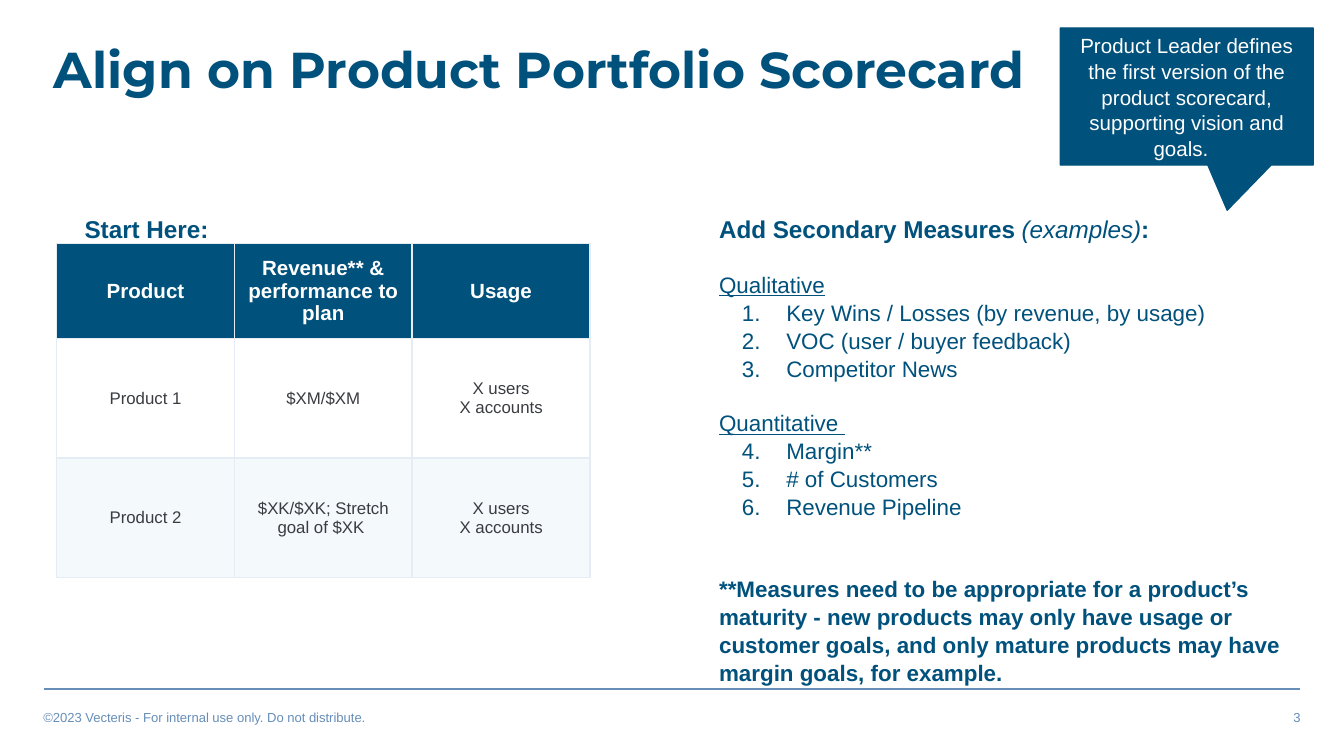
from lxml import etree
from pptx import Presentation
from pptx import util as u
from pptx.dml.color import RGBColor
from pptx.enum import shapes, text
from pptx.oxml.ns import qn

Cm, Pt = u.Cm, u.Pt
NAVY = RGBColor(0x00, 0x51, 0x7C)
STEEL = RGBColor(0x66, 0x8E, 0xB9)
EDGE = RGBColor(0xE5, 0xEC, 0xF3)
PALE = RGBColor(0xF4, 0xF9, 0xFC)
INK = RGBColor(0x3A, 0x3C, 0x41)
WHITE = RGBColor(0xFF, 0xFF, 0xFF)

LEFT, MID, RIGHT = text.PP_ALIGN.LEFT, text.PP_ALIGN.CENTER, text.PP_ALIGN.RIGHT
TOP, CENTER = text.MSO_ANCHOR.TOP, text.MSO_ANCHOR.MIDDLE
LOOSE = 1.04

HEAD = dict(size=13, bold=True)
LABEL = dict(size=12, underline=True)
ITEM = dict(size=12)
NOTE = dict(size=12, bold=True)
SMALL = dict(size=7, color=STEEL)

TABLE = [
    ["Product", "Revenue** & performance to plan", "Usage"],
    ["Product 1", "$XM/$XM", "X users\nX accounts"],
    ["Product 2", "$XK/$XK; Stretch goal of $XK ", "X users\nX accounts"],
]
FILLS = [NAVY, WHITE, PALE]
GROUPS = [
    ("Qualitative", ["Key Wins / Losses (by revenue, by usage)",
                     "VOC (user / buyer feedback)", "Competitor News"]),
    ("Quantitative ", ["Margin**", "# of Customers", "Revenue Pipeline"]),
]
CAUTION = ("**Measures need to be appropriate for a product’s maturity - "
           "new products may only have usage or customer goals, and only "
           "mature products may have margin goals, for example.")


def style(font, size, color=NAVY, name="Arial", **rest):
    font.color.rgb = color
    form = dict(name=name, size=Pt(size), bold=False) | rest
    for key, value in form.items():
        setattr(font, key, value)


def write(para, runs, align=LEFT, space=1.0, before=0):
    """Fill a paragraph with (words, format) runs."""
    para.alignment = align
    para.line_spacing = space
    para.space_before = Pt(before)
    for words, form in runs:
        run = para.add_run()
        run.text = words
        style(run.font, **form)


def frame(shape, side, edge, anchor=TOP):
    """Set the margins and wrapping of a text frame."""
    tf = shape.text_frame
    form = dict(margin_left=Cm(side), margin_right=Cm(side),
                margin_top=Cm(edge), margin_bottom=Cm(edge),
                word_wrap=True, auto_size=text.MSO_AUTO_SIZE.NONE,
                vertical_anchor=anchor)
    for key, value in form.items():
        setattr(tf, key, value)
    return tf


def place(shape, *box):
    for key, value in zip(("left", "top", "width", "height"), box):
        setattr(shape, key, Cm(value))


def label(slide, box, words, form, align=LEFT, edge=0.18, space=1.0):
    shape = slide.shapes.add_textbox(*map(Cm, box))
    write(frame(shape, 0.18, edge).paragraphs[0], [(words, form)], align, space)


def mark(para, start=None):
    """Number a paragraph from start, or clear its bullet."""
    props = para._p.get_or_add_pPr()
    props.set("marL", str(Cm(1.27) if start else 0))
    props.set("indent", str(-Cm(0.84) if start else 0))
    if not start:
        etree.SubElement(props, qn("a:buNone"))
        return
    tint = etree.SubElement(props, qn("a:buClr"))
    etree.SubElement(tint, qn("a:srgbClr"), val=str(NAVY))
    etree.SubElement(props, qn("a:buFont"), typeface="Arial")
    etree.SubElement(props, qn("a:buAutoNum"), type="arabicPeriod",
                     startAt=str(start))


def measures(body):
    """Headed numbered lists with a closing note."""
    place(body, 13.41, 3.84, 11, 9.14)
    tf = frame(body, 0.18, 0.18)
    rows = [([("Add Secondary Measures ", HEAD),
              ("(examples)", dict(size=13, italic=True)),
              (":", HEAD)], 0, None)]
    start = 1
    for name, items in GROUPS:
        rows.append(([(name, LABEL)], 14.4, None))
        rows += [([(item, ITEM)], 0, start) for item in items]
        start += len(items)
    rows.append(([(CAUTION, NOTE)], 28.8, None))
    for i, (runs, before, first) in enumerate(rows):
        para = tf.add_paragraph() if i else tf.paragraphs[0]
        write(para, runs, space=LOOSE, before=before)
        mark(para, first)


def border(cell):
    props = cell._tc.get_or_add_tcPr()
    for i, side in enumerate("LRTB"):
        line = etree.Element(qn(f"a:ln{side}"), w=str(Pt(1)))
        fill = etree.SubElement(line, qn("a:solidFill"))
        etree.SubElement(fill, qn("a:srgbClr"), val=str(EDGE))
        props.insert(i, line)


def grid(slide):
    """Scorecard table."""
    wide, high = 3.36, [1.8, 2.26, 2.26]
    table = slide.shapes.add_table(3, 3, Cm(1.07), Cm(4.6),
                                   Cm(3 * wide), Cm(sum(high))).table
    table.horz_banding = False
    for col in table.columns:
        col.width = Cm(wide)
    for r, (row, texts) in enumerate(zip(table.rows, TABLE)):
        row.height = Cm(high[r])
        form = dict(size=9, color=INK) if r else dict(size=11, color=WHITE, bold=True)
        for cell, words in zip(row.cells, texts):
            cell.fill.solid()
            cell.fill.fore_color.rgb = FILLS[r]
            border(cell)
            cell.vertical_anchor = CENTER
            cell.margin_left = cell.margin_right = Cm(0.13)
            cell.margin_top = cell.margin_bottom = Cm(0.06)
            tf = cell.text_frame
            for i, line in enumerate(words.split("\n")):
                para = tf.add_paragraph() if i else tf.paragraphs[0]
                write(para, [(line, form)], MID)


def callout(slide, words):
    shape = slide.shapes.add_shape(shapes.MSO_SHAPE.RECTANGULAR_CALLOUT,
                                   *map(Cm, (20.04, 0.53, 4.78, 2.59)))
    shape.shadow.inherit = False
    shape.adjustments[0], shape.adjustments[1] = 0.16, 0.83
    shape.fill.solid()
    shape.fill.fore_color.rgb = shape.line.color.rgb = NAVY
    shape.line.width = Pt(0.75)
    para = frame(shape, 0.25, 0.25, CENTER).paragraphs[0]
    write(para, [(words, dict(size=11, color=WHITE))], MID, LOOSE)


def footer(slide):
    """Rule, copyright line and page number."""
    rule = slide.shapes.add_connector(shapes.MSO_CONNECTOR.STRAIGHT,
                                      Cm(0.84), Cm(13.03), Cm(24.56), Cm(13.03))
    rule.line.color.rgb = STEEL
    rule.line.width = Pt(1)
    etree.SubElement(rule._element.spPr, qn("a:effectLst"))
    label(slide, (0.64, 13.31, 10.16, 0.48),
          "©2023 Vecteris - For internal use only. Do not distribute.", SMALL, edge=0.1)
    label(slide, (14.6, 13.31, 10.16, 0.48), "3", SMALL, RIGHT, edge=0.1)


def main():
    deck = Presentation()
    deck.slide_width, deck.slide_height = Cm(25.4), Cm(14.29)
    slide = deck.slides.add_slide(deck.slide_layouts[1])
    footer(slide)

    # Title
    title = slide.shapes.title
    place(title, 0.84, -0.03, 18.85, 2.77)
    write(frame(title, 0.18, 0.1, CENTER).paragraphs[0],
          [("Align on Product Portfolio Scorecard",
            dict(size=27, name="Montserrat", bold=True))], space=0.9)

    # Content
    measures(slide.placeholders[1])
    grid(slide)
    label(slide, (1.42, 3.84, 6.25, 0.94), "Start Here:", HEAD, space=LOOSE)
    callout(slide, "Product Leader defines the first version of the product "
                   "scorecard, supporting vision and goals.  ")
    deck.save("out.pptx")


if __name__ == "__main__":
    main()
